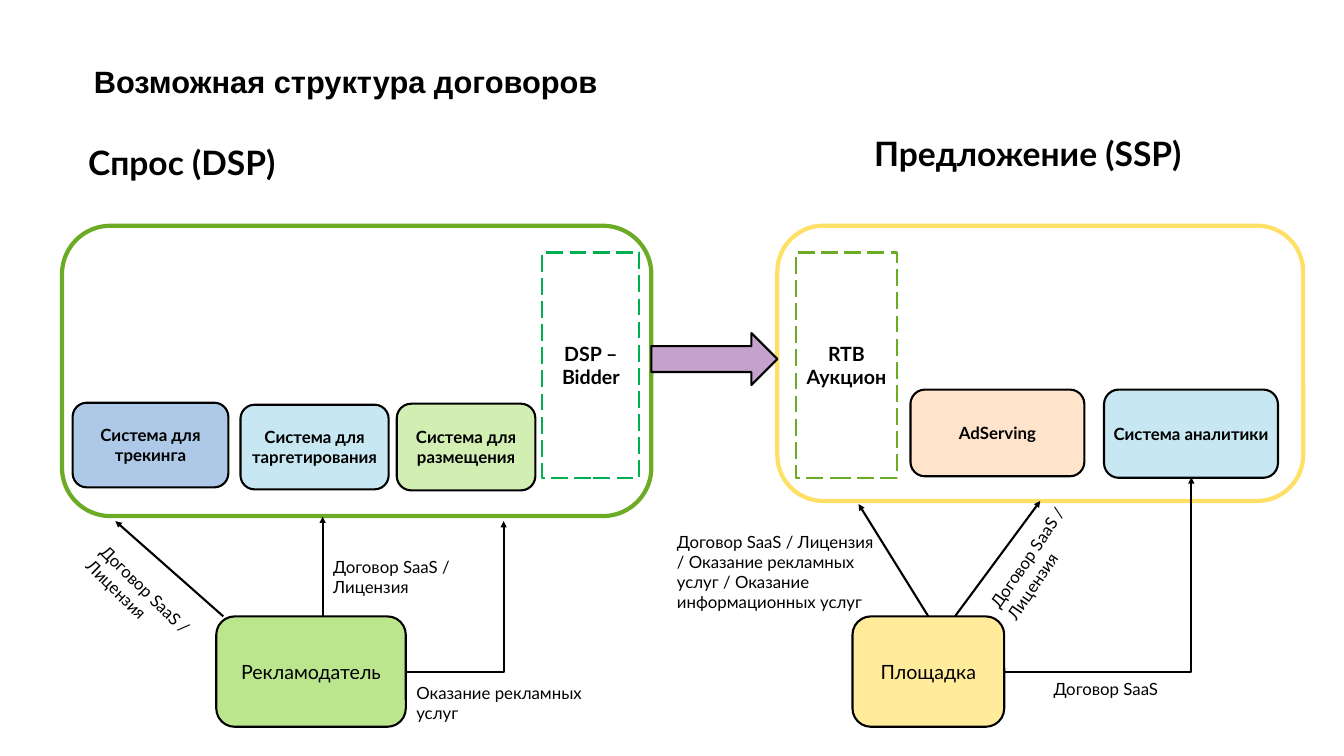
from dataclasses import dataclass

from lxml import etree
from pptx import Presentation
from pptx.dml.color import RGBColor
from pptx.enum.dml import MSO_LINE
from pptx.enum.shapes import MSO_CONNECTOR, MSO_SHAPE
from pptx.enum.text import MSO_ANCHOR, MSO_AUTO_SIZE, PP_ALIGN
from pptx.oxml.ns import qn
from pptx.util import Emu, Pt

PX = 9144  # 100 px to the inch
TITLE_ONLY = 5
TOP, BOTTOM = 0, 2
ROUNDED, RECT, RIGHT_ARROW = MSO_SHAPE.ROUNDED_RECTANGLE, MSO_SHAPE.RECTANGLE, MSO_SHAPE.RIGHT_ARROW
STRAIGHT, ELBOW = MSO_CONNECTOR.STRAIGHT, MSO_CONNECTOR.ELBOW
LONG_DASH = MSO_LINE.LONG_DASH
LEFT, CENTER = PP_ALIGN.LEFT, PP_ALIGN.CENTER
MIDDLE = MSO_ANCHOR.MIDDLE
NO_FIT, GROW = MSO_AUTO_SIZE.NONE, MSO_AUTO_SIZE.SHAPE_TO_FIT_TEXT


@dataclass(frozen=True)
class Theme:
    title_font: str = "Arial"
    font: str = "Lato"
    title: int = 44
    heading: int = 48
    party: int = 28
    label: int = 24
    thin: int = 3
    thick: int = 6
    black: str = "000000"
    white: str = "FFFFFF"
    demand: str = "6CAB26"
    supply: str = "FFE066"
    bidder: str = "00B050"
    advertiser: str = "BCE68D"
    publisher: str = "FFEB99"
    tracking: str = "ADC9E7"
    sky: str = "C7E7F3"
    placement: str = "D2EEB3"
    serving: str = "FFE4CB"
    bid_flow: str = "C5A2CB"


THEME = Theme()
SAAS_LICENCE = "Договор SaaS / Лицензия"


def px(*lengths):
    return [Emu(length * PX) for length in lengths]


def rgb(colour):
    return RGBColor.from_string(colour)


def write(paragraph, text, size, bold=False, font=THEME.font, align=LEFT):
    paragraph.alignment = align
    run = paragraph.add_run()
    run.text = text
    run.font.name = font
    run.font.size = Pt(size)
    run.font.bold = bold
    run.font.color.rgb = rgb(THEME.black)


def add_title(slide, text, box):
    title = slide.shapes.title
    title.left, title.top, title.width, title.height = px(*box)
    frame = title.text_frame
    frame.auto_size = NO_FIT
    frame.vertical_anchor = MIDDLE
    frame.margin_left = 0
    paragraph = frame.paragraphs[0]
    paragraph.line_spacing = Pt(60)
    paragraph.space_after = Pt(30)
    write(paragraph, text, THEME.title, True, THEME.title_font)


def add_block(slide, box, fill, kind=ROUNDED, lines=(), size=THEME.label, bold=True,
              outline=THEME.black, weight=THEME.thin, dash=None):
    """Add a filled, outlined shape with one centred paragraph per line of text."""
    block = slide.shapes.add_shape(kind, *px(*box))
    block.shadow.inherit = False
    block.fill.solid()
    block.fill.fore_color.rgb = rgb(fill)
    block.line.color.rgb = rgb(outline)
    block.line.width = Pt(weight)
    if dash:
        block.line.dash_style = dash
    frame = block.text_frame
    frame.word_wrap = True
    frame.vertical_anchor = MIDDLE
    for index, line in enumerate(lines):
        paragraph = frame.add_paragraph() if index else frame.paragraphs[0]
        write(paragraph, line, size, bold, align=CENTER)
    return block


def add_label(slide, text, box, size=THEME.label, bold=False, rotation=0):
    label = slide.shapes.add_textbox(*px(*box))
    label.rotation = rotation
    frame = label.text_frame
    frame.word_wrap = True
    frame.auto_size = GROW
    write(frame.paragraphs[0], text, size, bold)


def add_arrow(slide, start, end, kind=STRAIGHT):
    """Add an arrow; an elbow runs sideways first and then turns once."""
    arrow = slide.shapes.add_connector(kind, *px(*start, *end))
    arrow.line.color.rgb = rgb(THEME.black)
    arrow.line.width = Pt(THEME.thin)
    properties = arrow._element.spPr
    if kind == ELBOW:
        properties.find(qn("a:prstGeom")).set("prst", "bentConnector2")
    etree.SubElement(arrow.line._get_or_add_ln(), qn("a:tailEnd"), type="triangle")
    etree.SubElement(properties, qn("a:effectLst"))
    return arrow


def add_platforms(slide):
    """Draw the demand and supply sides with their systems; return the supply frame."""
    add_block(slide, (123, 448, 1169, 576), THEME.white,
              outline=THEME.demand, weight=THEME.thick)
    supply = add_block(slide, (1542, 448, 1043, 546), THEME.white,
                       outline=THEME.supply, weight=THEME.thick)
    add_label(slide, "Спрос (DSP)", (165, 277, 835, 91), THEME.heading, True)
    add_label(slide, "Предложение (SSP)", (1724, 259, 835, 91), THEME.heading, True)

    systems = (
        ("Система для трекинга", (144, 799, 309, 168), THEME.tracking),
        ("Система для таргетирования", (477, 803, 294, 168), THEME.sky),
        ("Система для размещения", (787, 801, 275, 172), THEME.placement),
        ("AdServing", (1806, 773, 345, 172), THEME.serving),
        ("Система аналитики", (2190, 773, 345, 175), THEME.sky),
    )
    for name, box, fill in systems:
        add_block(slide, box, fill, lines=[name])

    exchanges = (
        (["DSP –Bidder"], (1076, 501, 192, 447), THEME.bidder),
        (["RTB", "Аукцион"], (1579, 501, 200, 447), THEME.demand),
    )
    for lines, box, outline in exchanges:
        add_block(slide, box, THEME.white, RECT, lines, THEME.party,
                  outline=outline, dash=LONG_DASH)
    add_block(slide, (1292, 661, 250, 103), THEME.bid_flow, RIGHT_ARROW)
    return supply


def add_contracts(slide, supply):
    """Draw both contracting parties, their arrows and the contract names."""
    add_block(slide, (429, 1223, 376, 219), THEME.advertiser,
              lines=["Рекламодатель"], size=THEME.party, bold=False)
    publisher = add_block(slide, (1691, 1223, 301, 219), THEME.publisher,
                          lines=["Площадка"], size=THEME.party, bold=False)

    auction_arrow = add_arrow(slide, (1841, 1223), (1703, 1000))
    auction_arrow.begin_connect(publisher, TOP)
    supply_arrow = add_arrow(slide, (1895, 1222), (2065, 993))
    supply_arrow.end_connect(supply, BOTTOM)
    add_arrow(slide, (640, 1222), (640, 1025))
    add_arrow(slide, (443, 1223), (229, 1034))
    add_arrow(slide, (1992, 1333), (2363, 947), ELBOW)
    add_arrow(slide, (805, 1333), (999, 1034), ELBOW)

    contracts = (
        (SAAS_LICENCE, (139, 1162, 318, 91), 44.4),
        (SAAS_LICENCE, (651, 1099, 318, 91), 0),
        ("Оказание рекламных услуг", (816, 1350, 379, 91), 0),
        ("Договор SaaS / Лицензия / Оказание рекламных услуг / "
         "Оказание информационных услуг", (1333, 1050, 417, 172), 0),
        (SAAS_LICENCE, (1901, 1020, 379, 91), 304.4),
        ("Договор SaaS", (2080, 1342, 417, 50), 0),
    )
    for text, box, rotation in contracts:
        add_label(slide, text, box, rotation=rotation)


def main():
    deck = Presentation()
    deck.slide_width, deck.slide_height = px(2666, 1500)
    slide = deck.slides.add_slide(deck.slide_layouts[TITLE_ONLY])
    add_title(slide, "Возможная структура договоров", (186, 83, 2396, 146))
    supply = add_platforms(slide)
    add_contracts(slide, supply)
    deck.save("out.pptx")


if __name__ == "__main__":
    main()
